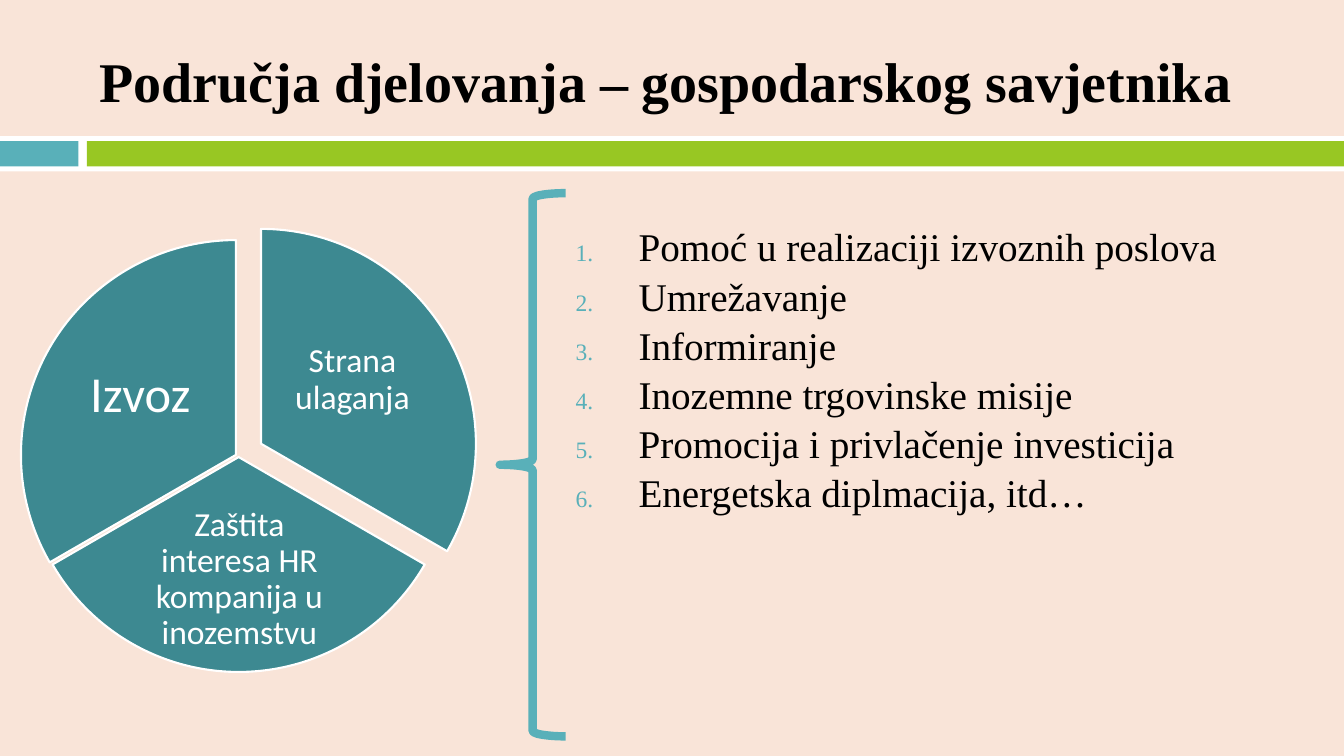
from pptx import Presentation
from pptx.dml.color import RGBColor as RGB
from pptx.enum.shapes import MSO_SHAPE as Kind
from pptx.enum.text import MSO_ANCHOR as Anchor, MSO_AUTO_SIZE as Fit, PP_ALIGN as Align
from pptx.oxml.ns import qn
from pptx.util import Pt
from lxml.etree import SubElement as Sub

HUES = {"back": "F9E4D8", "white": "FFFFFF", "teal": "59B0B9",
        "deep": "3D8991", "green": "98C723", "ink": "000000"}
WIDE, HIGH = 960, 540


def hue(name):
    return RGB.from_string(HUES[name])


def write(frame, lines, size, font="Times New Roman", color="ink", bold=False,
          align=Align.LEFT, anchor=Anchor.TOP, inset=None, space=None, before=0):
    """Fill a text frame with one paragraph per line."""
    frame.word_wrap, frame.auto_size = True, Fit.NONE
    frame.vertical_anchor = anchor
    if inset is not None:
        frame.margin_left = frame.margin_right = Pt(inset)
        frame.margin_top = frame.margin_bottom = Pt(inset)
    for i, line in enumerate(lines):
        para = frame.add_paragraph() if i else frame.paragraphs[0]
        para.alignment, para.space_before = align, Pt(before)
        if space:
            para.line_spacing = space
        run = para.add_run()
        run.text = line
        run.font.size, run.font.name, run.font.bold = Pt(size), font, bold
        run.font.color.rgb = hue(color)


class Board:
    def __init__(self, deck):
        self.slide = deck.slides.add_slide(deck.slide_layouts[5])
        fill = self.slide.background.fill
        fill.solid()
        fill.fore_color.rgb = hue("back")

    def shape(self, kind, box, fill=None, line=None, width=1):
        item = self.slide.shapes.add_shape(kind, *map(Pt, box))
        item.shadow.inherit = False
        if fill:
            item.fill.solid()
            item.fill.fore_color.rgb = hue(fill)
        else:
            item.fill.background()
        if line:
            item.line.color.rgb = hue(line)
            item.line.width = Pt(width)
        else:
            item.line.fill.background()
        return item

    def title(self, text, box):
        item = self.slide.shapes.title
        item.left, item.top, item.width, item.height = map(Pt, box)
        write(item.text_frame, [text], 40, bold=True, anchor=Anchor.MIDDLE)

    def text(self, lines, box, size, **style):
        item = self.slide.shapes.add_textbox(*map(Pt, box))
        write(item.text_frame, lines, size, **style)
        return item

    def steps(self, lines, box, indent=45):
        item = self.text(lines, box, 28, before=1.5)
        for para in item.text_frame.paragraphs:
            prop = para._p.get_or_add_pPr()
            prop.set("marL", str(Pt(indent)))
            prop.set("indent", str(-Pt(indent)))
            tint = Sub(prop, qn("a:buClr"))
            Sub(tint, qn("a:srgbClr"), val=HUES["teal"])
            Sub(prop, qn("a:buSzPct"), val="60000")
            Sub(prop, qn("a:buFont"), typeface="Times New Roman")
            Sub(prop, qn("a:buAutoNum"), type="arabicPeriod")

    def wedge(self, spot, start, label, box, size, inset):
        item = self.shape(Kind.PIE, (*spot, 307, 307), "deep", "white", 1.5)
        # Angles count 0.6 per degree; each wedge is a third of the circle
        item.adjustments[0] = start * 0.6
        item.adjustments[1] = (start + 120) % 360 * 0.6
        self.text([label], box, size, font="Calibri", color="white", inset=inset,
                  align=Align.CENTER, anchor=Anchor.MIDDLE, space=0.9)


def main():
    deck = Presentation()
    deck.slide_width, deck.slide_height = Pt(WIDE), Pt(HIGH)
    board = Board(deck)

    # Header band
    for left, top, wide, high, fill in [(0, 97.2, WIDE, 25.2, "white"),
                                        (0, 100.8, 56, 18, "teal"),
                                        (62, 100.8, WIDE - 62, 18, "green")]:
        board.shape(Kind.RECTANGLE, (left, top, wide, high), fill)
    board.title("Područja djelovanja – gospodarskog savjetnika", (64, 18, 856, 78))

    # Numbered list
    board.steps(["Pomoć u realizaciji izvoznih poslova",
                 "Umrežavanje",
                 "Informiranje",
                 "Inozemne trgovinske misije",
                 "Promocija i privlačenje investicija",
                 "Energetska diplmacija, itd…"], (404, 155.5, 517, 354))

    # Split circle
    board.wedge((33, 163.5), 270, "Strana ulaganja",
                (199.5, 220.5, 104.5, 102), 24, 2.4)
    board.wedge((17, 173), 30, "Zaštita interesa HR kompanija u inozemstvu",
                (101.5, 366.5, 139, 95), 24, 2.4)
    board.wedge((15, 171.5), 150, "Izvoz", (48, 232, 104.5, 102), 36, 3.6)

    # Brace between circle and list
    board.shape(Kind.LEFT_BRACE, (357, 138, 47, 388), line="teal", width=6)

    deck.save("out.pptx")


if __name__ == "__main__":
    main()
